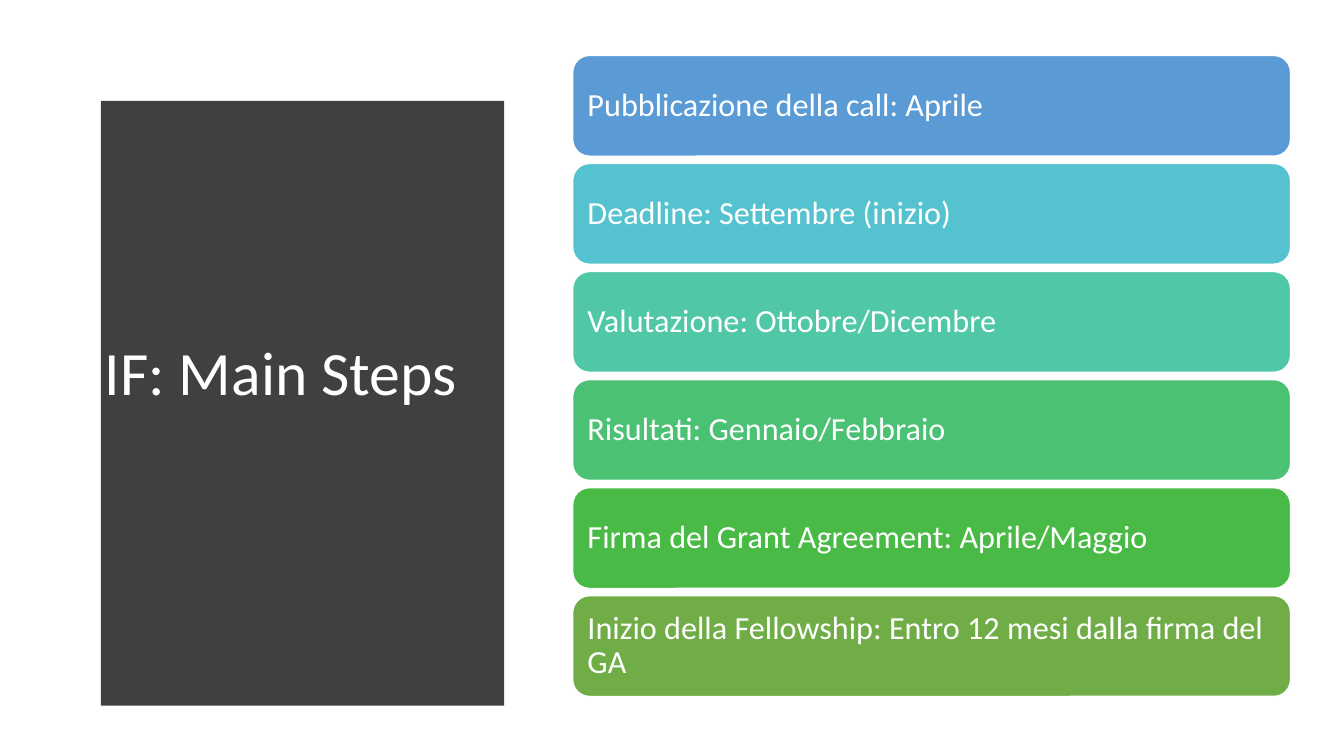
from pptx import Presentation
from pptx.dml.color import RGBColor
from pptx.enum.shapes import MSO_SHAPE
from pptx.enum.text import MSO_ANCHOR, MSO_AUTO_SIZE, PP_ALIGN
from pptx.util import Inches, Pt

ROUNDED = MSO_SHAPE.ROUNDED_RECTANGLE
MIDDLE = MSO_ANCHOR.MIDDLE
LEFT = PP_ALIGN.LEFT
NO_FIT = MSO_AUTO_SIZE.NONE

FONT = "Calibri"
WHITE = "FFFFFF"
TITLE_ONLY = 5

PANEL_LEFT, PANEL_TOP, PANEL_BOTTOM = 0.53, 0.52, 6.96
PANEL_EDGE, PANEL_BULGE, CURVE_STEPS = 5.08, 0.24, 40

STEP_LEFT, STEP_TOP, STEP_WIDTH, STEP_HEIGHT = 5.68, 0.55, 7.12, 1
STEP_PITCH = 1.072
STEPS = [
    ("Pubblicazione della call: Aprile", "5B9BD5"),
    ("Deadline: Settembre (inizio)", "55C3CF"),
    ("Valutazione: Ottobre/Dicembre", "50C8A7"),
    ("Risultati: Gennaio/Febbraio", "4BC174"),
    ("Firma del Grant Agreement: Aprile/Maggio", "4ABA46"),
    ("Inizio della Fellowship: Entro 12 mesi dalla firma del GA", "70AD47"),
]


def paint(fill, color):
    fill.solid()
    fill.fore_color.rgb = RGBColor.from_string(color)


def set_text(sp, text, size):
    tf = sp.text_frame
    tf.text = text
    tf.word_wrap = True
    tf.auto_size = NO_FIT
    tf.vertical_anchor = MIDDLE
    p = tf.paragraphs[0]
    p.alignment = LEFT
    p.line_spacing = 0.9
    font = p.runs[0].font
    font.name = FONT
    font.size = Pt(size)
    paint(font.fill, WHITE)


def add_panel(slide):
    """Draw the dark panel, whose right side bulges as a parabola."""
    height = PANEL_BOTTOM - PANEL_TOP
    curve = []
    for i in range(CURVE_STEPS + 1):
        t = i / CURVE_STEPS
        curve.append((PANEL_EDGE + PANEL_BULGE * 4 * t * (1 - t),
                      PANEL_TOP + height * t))
    builder = slide.shapes.build_freeform(PANEL_LEFT, PANEL_TOP, scale=Inches(1))
    builder.add_line_segments(curve + [(PANEL_LEFT, PANEL_BOTTOM)], close=True)
    sp = builder.convert_to_shape()
    sp.shadow.inherit = False
    paint(sp.fill, "404040")
    sp.line.fill.background()
    return sp


def add_title(slide, panel, text):
    title = slide.shapes.title
    title.left, title.top = Inches(0.94), Inches(1.11)
    title.width, title.height = Inches(3.74), Inches(5.24)
    set_text(title, text, 44)
    # The title must lie in front of the panel.
    title.element.addprevious(panel.element)


def add_step(slide, row, text, color):
    sp = slide.shapes.add_shape(
        ROUNDED, Inches(STEP_LEFT), Inches(STEP_TOP + row * STEP_PITCH),
        Inches(STEP_WIDTH), Inches(STEP_HEIGHT))
    sp.shadow.inherit = False
    paint(sp.fill, color)
    paint(sp.line.fill, WHITE)
    sp.line.width = Pt(1)
    set_text(sp, text, 23)


def main():
    prs = Presentation()
    prs.slide_width, prs.slide_height = Inches(13.33), Inches(7.5)
    slide = prs.slides.add_slide(prs.slide_layouts[TITLE_ONLY])
    panel = add_panel(slide)
    add_title(slide, panel, "IF: Main Steps")
    for row, (text, color) in enumerate(STEPS):
        add_step(slide, row, text, color)
    prs.save("out.pptx")


if __name__ == "__main__":
    main()
